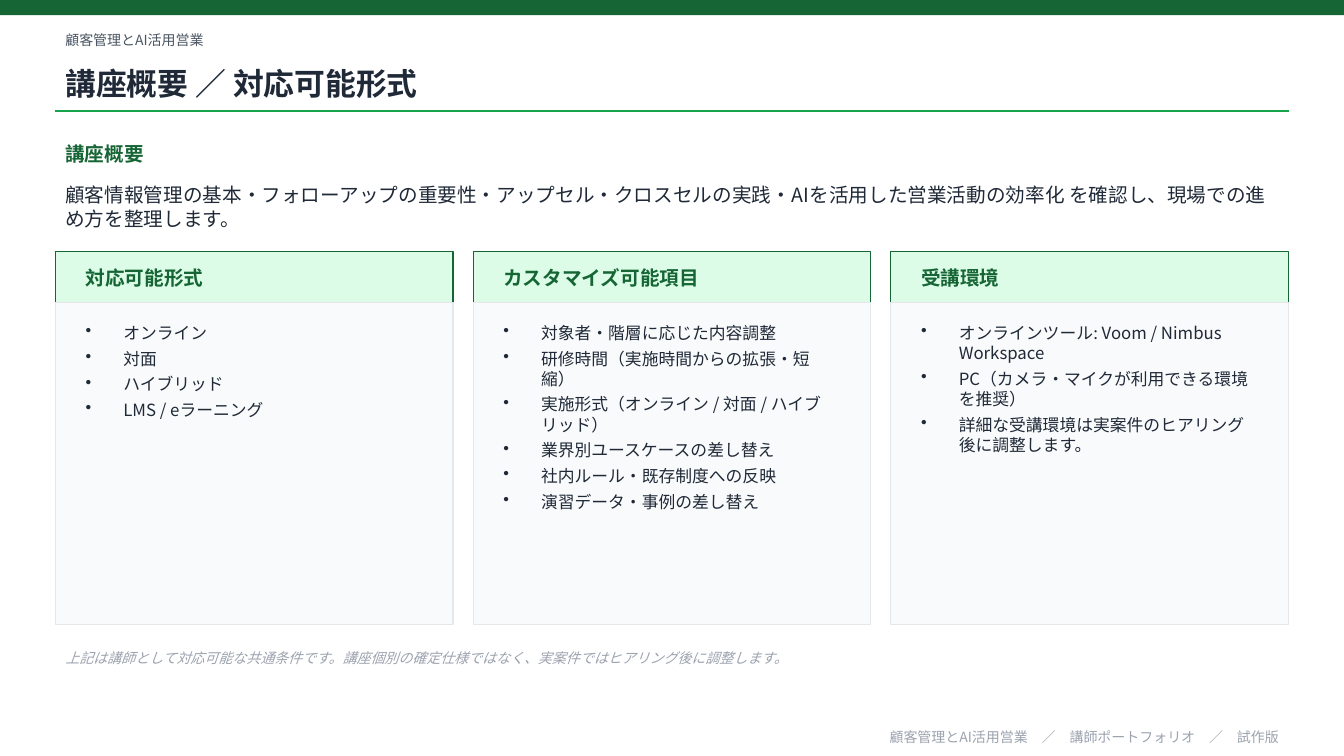
from lxml.etree import SubElement
from pptx import Presentation
from pptx.dml.color import RGBColor
from pptx.enum.shapes import MSO_CONNECTOR, MSO_SHAPE
from pptx.enum.text import MSO_ANCHOR, PP_ALIGN
from pptx.oxml.ns import qn
from pptx.util import Pt

PAGE_WIDTH, PAGE_HEIGHT = 960, 540
LEFT, WIDTH = 39.6, 880.8
GREEN, INK, FAINT = "166534", "1F2937", "9CA3AF"
COLUMN_GAP, COLUMN_PAD = 14.4, 14.4
HEAD_TOP, HEAD_HEIGHT, BODY_HEIGHT = 180, 36, 230.4
BULLET_INDENT = 27

HEADING = {"size": Pt(14), "bold": True}

COLUMNS = {
    "対応可能形式": [
        "オンライン",
        "対面",
        "ハイブリッド",
        "LMS / eラーニング",
    ],
    "カスタマイズ可能項目": [
        "対象者・階層に応じた内容調整",
        "研修時間（実施時間からの拡張・短縮）",
        "実施形式（オンライン / 対面 / ハイブリッド）",
        "業界別ユースケースの差し替え",
        "社内ルール・既存制度への反映",
        "演習データ・事例の差し替え",
    ],
    "受講環境": [
        "オンラインツール: Voom / Nimbus Workspace",
        "PC（カメラ・マイクが利用できる環境を推奨）",
        "詳細な受講環境は実案件のヒアリング後に調整します。",
    ],
}


def color(hex_code):
    return RGBColor.from_string(hex_code)


class SlideBuilder:
    font_name = "Noto Sans CJK JP"

    def __init__(self, slide):
        self.slide = slide

    def box(self, left, top, width, height, fill, outline=None):
        panel = self.slide.shapes.add_shape(
            MSO_SHAPE.RECTANGLE, Pt(left), Pt(top), Pt(width), Pt(height))
        panel.shadow.inherit = False
        panel.fill.solid()
        panel.fill.fore_color.rgb = color(fill)
        if outline:
            panel.line.color.rgb = color(outline)
            panel.line.width = Pt(0.75)
        else:
            panel.line.fill.background()

    def rule(self, left, top, width, stroke):
        line = self.slide.shapes.add_connector(
            MSO_CONNECTOR.STRAIGHT, Pt(left), Pt(top), Pt(left + width), Pt(top))
        line.line.color.rgb = color(stroke)
        line.line.width = Pt(1)
        SubElement(line._element.spPr, qn("a:effectLst"))

    def frame(self, left, top, width, height, anchor):
        frame = self.slide.shapes.add_textbox(
            Pt(left), Pt(top), Pt(width), Pt(height)).text_frame
        frame.word_wrap = True
        frame.vertical_anchor = anchor
        return frame

    def add_words(self, paragraph, words, ink, formats):
        run = paragraph.add_run()
        run.text = words
        for attribute, value in {"name": self.font_name, **formats}.items():
            setattr(run.font, attribute, value)
        run.font.color.rgb = color(ink)
        SubElement(run._r.get_or_add_rPr(), qn("a:ea"), typeface=self.font_name)

    def text(self, left, top, width, height, words, ink, formats, align=PP_ALIGN.LEFT):
        frame = self.frame(left, top, width, height, MSO_ANCHOR.MIDDLE)
        paragraph = frame.paragraphs[0]
        paragraph.alignment = align
        self.add_words(paragraph, words, ink, formats)

    def bullets(self, left, top, width, height, items, ink, formats):
        frame = self.frame(left, top, width, height, MSO_ANCHOR.TOP)
        for index, item in enumerate(items):
            paragraph = frame.add_paragraph() if index else frame.paragraphs[0]
            paragraph.space_after = Pt(4)
            properties = paragraph._p.get_or_add_pPr()
            properties.set("marL", str(Pt(BULLET_INDENT)))
            properties.set("indent", str(-Pt(BULLET_INDENT)))
            SubElement(properties, qn("a:buChar"), char="•")
            self.add_words(paragraph, item, ink, formats)

    def column(self, left, width, heading, items):
        text_left, text_width = left + COLUMN_PAD, width - 2 * COLUMN_PAD
        body_top = HEAD_TOP + HEAD_HEIGHT
        self.box(left, HEAD_TOP, width, HEAD_HEIGHT, "DCFCE7", GREEN)
        self.text(text_left, HEAD_TOP, text_width, HEAD_HEIGHT, heading, GREEN, HEADING)
        self.box(left, body_top, width, BODY_HEIGHT, "F9FAFB", "E5E7EB")
        self.bullets(text_left, body_top + 10.8, text_width, BODY_HEIGHT - 25.2,
                     items, INK, {"size": Pt(12)})


def main():
    deck = Presentation()
    deck.slide_width, deck.slide_height = Pt(PAGE_WIDTH), Pt(PAGE_HEIGHT)
    page = SlideBuilder(deck.slides.add_slide(deck.slide_layouts[6]))

    page.box(0, 0, PAGE_WIDTH, 10.8, GREEN)
    page.text(LEFT, 18, WIDTH, 21.6, "顧客管理とAI活用営業", "4B5563", {"size": Pt(10)})
    page.text(LEFT, 39.6, WIDTH, 39.6, "講座概要 ／ 対応可能形式", INK,
              {"size": Pt(22), "bold": True})
    page.rule(LEFT, 79.2, WIDTH, "16A34A")
    page.text(LEFT, 97.2, WIDTH, 25.2, "講座概要", GREEN, HEADING)
    page.text(LEFT, 126, WIDTH, 43.2,
              "顧客情報管理の基本・フォローアップの重要性・アップセル・クロスセルの実践・"
              "AIを活用した営業活動の効率化 を確認し、現場での進め方を整理します。",
              INK, {"size": Pt(14)})

    column_width = (WIDTH - COLUMN_GAP * (len(COLUMNS) - 1)) / len(COLUMNS)
    for index, (heading, items) in enumerate(COLUMNS.items()):
        column_left = LEFT + index * (column_width + COLUMN_GAP)
        page.column(column_left, column_width, heading, items)

    page.text(LEFT, 457.2, WIDTH, 25.2,
              "上記は講師として対応可能な共通条件です。"
              "講座個別の確定仕様ではなく、実案件ではヒアリング後に調整します。",
              FAINT, {"size": Pt(10), "italic": True})
    page.text(LEFT, 518.4, WIDTH, 15.84,
              "顧客管理とAI活用営業　／　講師ポートフォリオ　／　試作版",
              FAINT, {"size": Pt(10)}, PP_ALIGN.RIGHT)
    deck.save("out.pptx")


if __name__ == "__main__":
    main()
